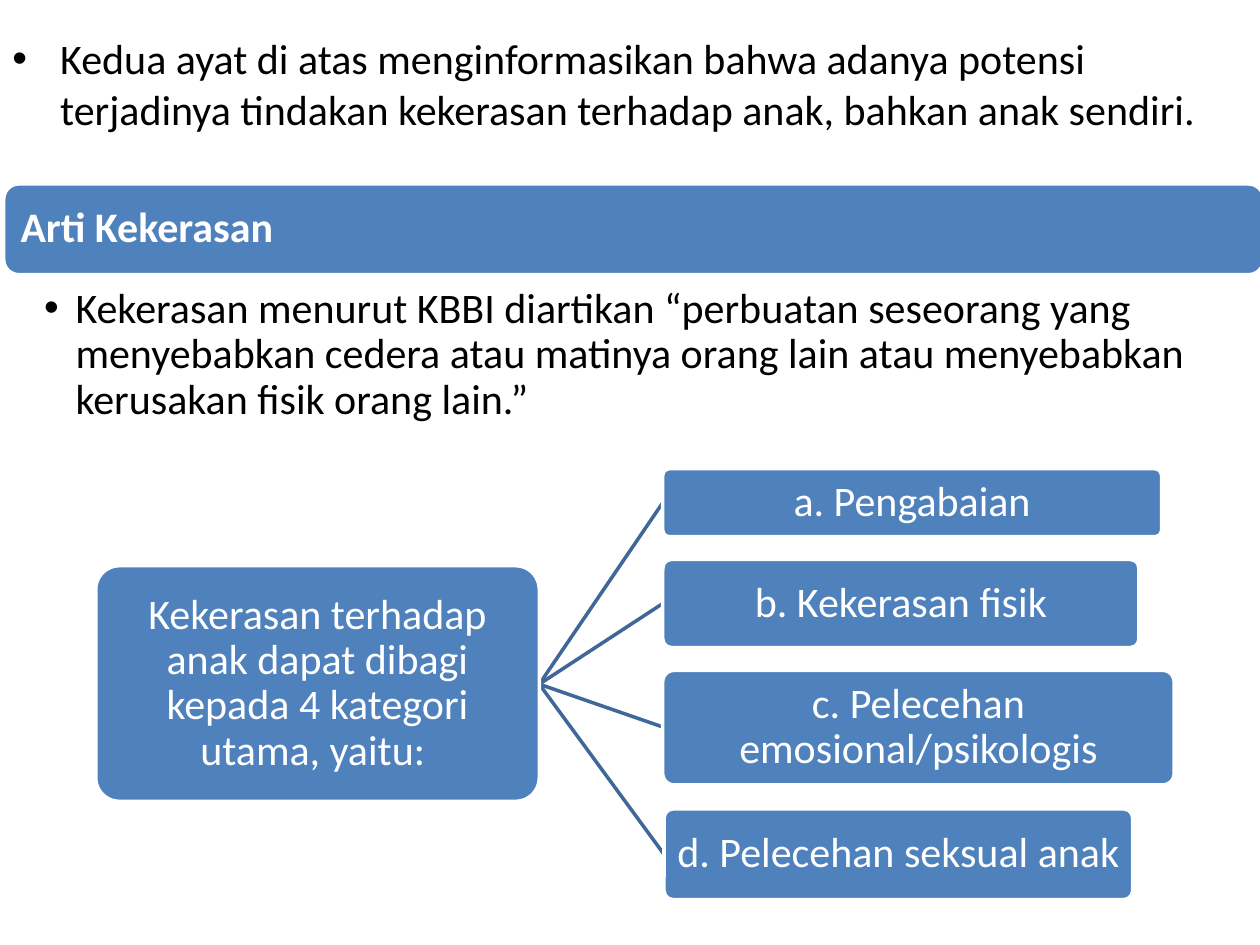
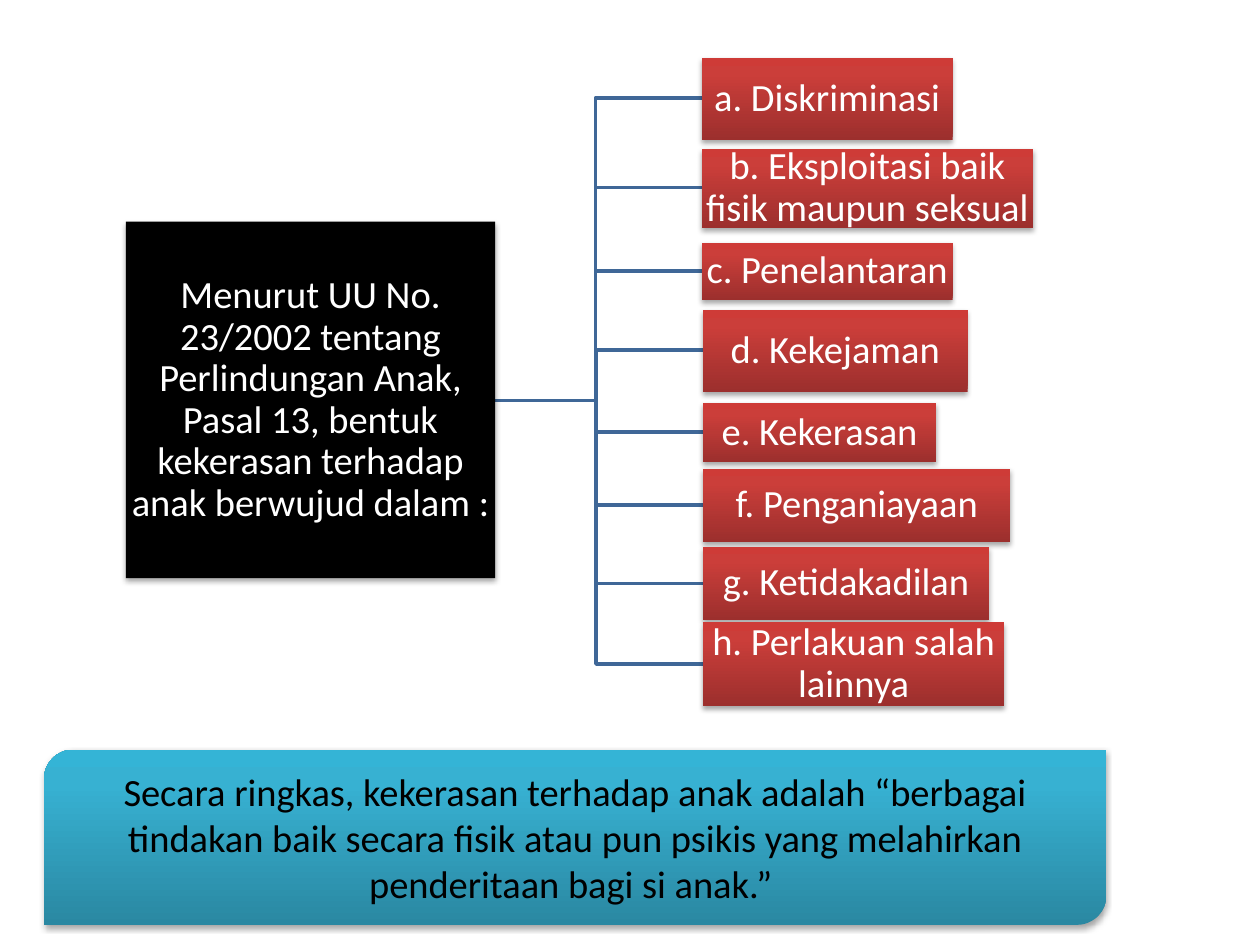
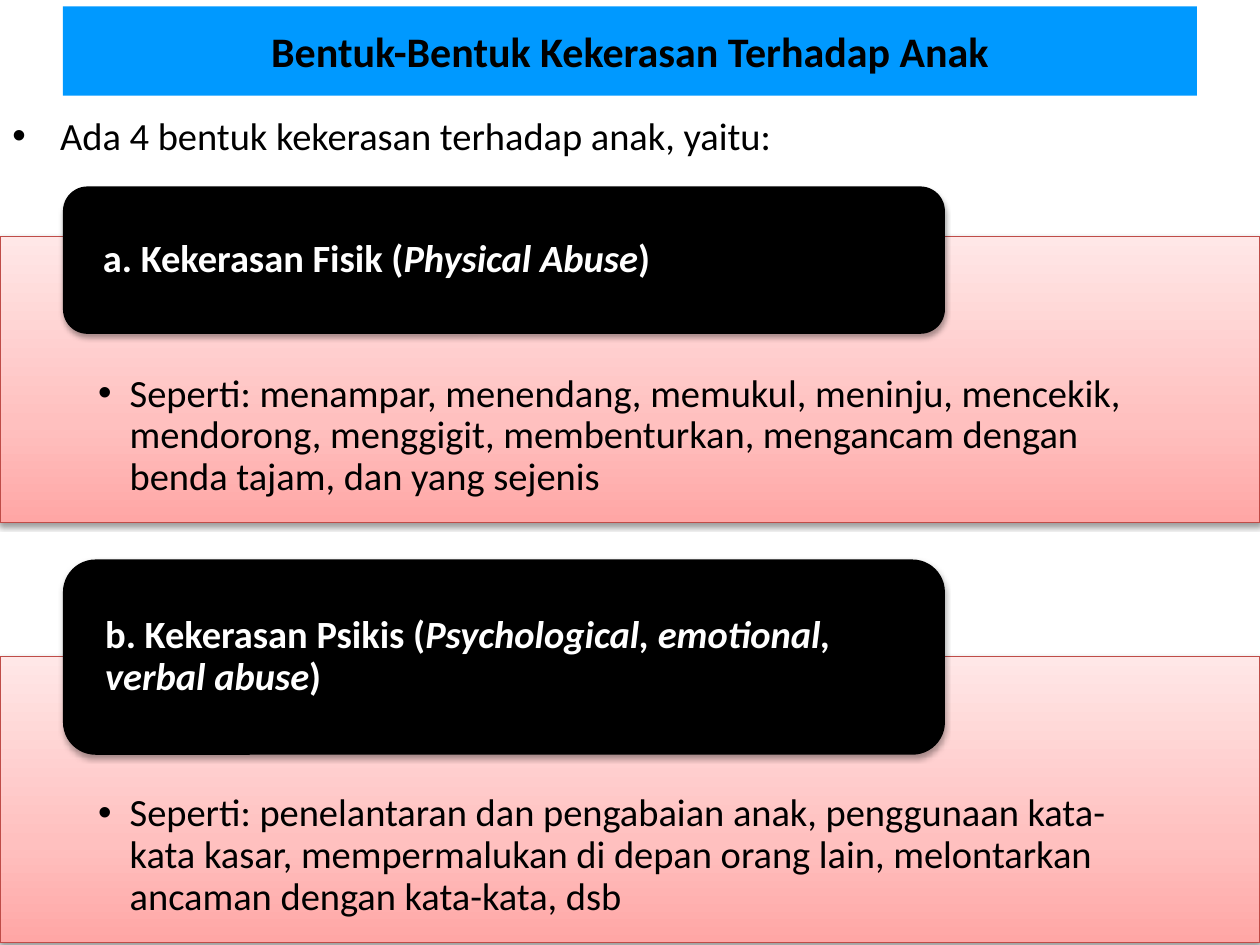
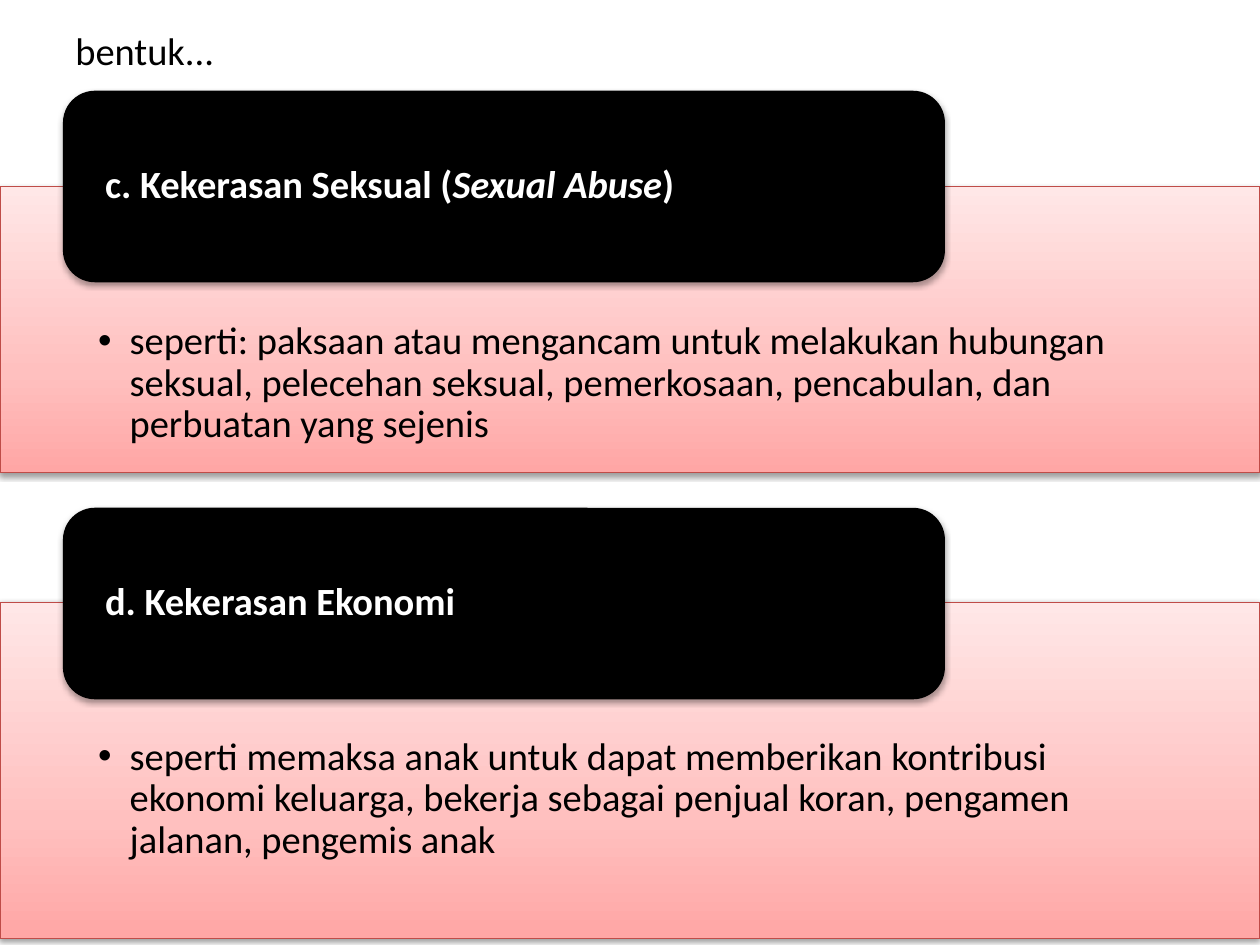
from lxml.etree import SubElement
from pptx import Presentation
from pptx.dml.color import RGBColor
from pptx.enum.shapes import MSO_CONNECTOR as CONN, MSO_SHAPE as SHAPE
from pptx.enum.text import MSO_ANCHOR as ANCHOR, PP_ALIGN as ALIGN
from pptx.oxml.ns import qn
from pptx.util import Pt

PX = 9144  # 100 px to the inch
FONT = "Calibri"
BLACK = RGBColor(0x00, 0x00, 0x00)
WHITE = RGBColor(0xFF, 0xFF, 0xFF)
BLUE = RGBColor(0x4F, 0x81, 0xBD)
LINK = RGBColor(0x3F, 0x67, 0x97)
TITLE_BLUE = RGBColor(0x00, 0x99, 0xFF)
PANEL_LINE = RGBColor(0xBF, 0x4C, 0x48)

# Gradients run from the bottom up: (percent, colour)
RED_GRAD = [(0, RGBColor(0x9C, 0x2F, 0x2D)), (80, RGBColor(0xCB, 0x3E, 0x3A)),
            (100, RGBColor(0xCE, 0x3B, 0x37))]
AQUA_GRAD = [(0, RGBColor(0x2A, 0x88, 0xA2)), (80, RGBColor(0x37, 0xB1, 0xD2)),
             (100, RGBColor(0x34, 0xB4, 0xD6))]
PINK_GRAD = [(0, RGBColor(0xFF, 0xA6, 0xA5)), (35, RGBColor(0xFF, 0xC0, 0xBF)),
             (100, RGBColor(0xFF, 0xE7, 0xE7))]

# Shadows: opacity in percent, distance in points
SHADOW = (35, 1.8)
PANEL_SHADOW = (38, 1.6)


def add_box(s, kind, at, fill, line=None, line_pt=2, shadow=None, adj=None):
    sp = s.shapes.add_shape(kind, *(v * PX for v in at))
    sp.shadow.inherit = False
    if adj is not None:
        sp.adjustments[0] = adj
    if isinstance(fill, list):
        sp.fill.gradient()
        sp.fill.gradient_angle = 90
        stops = sp._element.spPr.find(qn("a:gradFill")).find(qn("a:gsLst"))
        stops[:] = []
        for pos, color in fill:
            gs = SubElement(stops, qn("a:gs"), pos=str(pos * 1000))
            SubElement(gs, qn("a:srgbClr"), val=str(color))
    else:
        sp.fill.solid()
        sp.fill.fore_color.rgb = fill
    if line is None:
        sp.line.fill.background()
    else:
        sp.line.color.rgb = line
        sp.line.width = Pt(line_pt)
    if shadow:
        alpha, dist = shadow
        effects = sp._element.spPr.find(qn("a:effectLst"))
        outer = SubElement(effects, qn("a:outerShdw"), blurRad=str(Pt(3.1)), dist=str(Pt(dist)),
                           dir="5400000", rotWithShape="0")
        color = SubElement(outer, qn("a:srgbClr"), val=str(BLACK))
        SubElement(color, qn("a:alpha"), val=str(alpha * 1000))
    return sp


def write(sp, runs, size, color, ins=(10, 5, 10, 5), anchor=ANCHOR.MIDDLE,
          align=ALIGN.LEFT, spacing=0.9, bold=False, bullet=0):
    """Write (text, italic) runs; bullet is the hanging indent in px."""
    tf = sp.text_frame
    tf.word_wrap = True
    tf.vertical_anchor = anchor
    tf.margin_left, tf.margin_top, tf.margin_right, tf.margin_bottom = (v * PX for v in ins)
    p = tf.paragraphs[0]
    p.alignment = align
    p.line_spacing = spacing
    if bullet:
        pPr = p._p.get_or_add_pPr()
        pPr.set("marL", str(bullet * PX))
        pPr.set("indent", str(-bullet * PX))
        SubElement(pPr, qn("a:buFont"), typeface="Arial")
        SubElement(pPr, qn("a:buChar"), char="•")
    for text, italic in runs:
        r = p.add_run()
        r.text = text
        r.font.name = FONT
        r.font.size = Pt(size)
        r.font.color.rgb = color
        r.font.bold = bold
        r.font.italic = italic


prs = Presentation()
prs.slide_width, prs.slide_height = 1000 * PX, 750 * PX
slides = [prs.slides.add_slide(prs.slide_layouts[6]) for _ in range(4)]

# Plain text: slide, place, text, size, anchor, line spacing, insets, bullet
PLAIN = (10, 5, 10, 5)
for n, at, text, size, anchor, spacing, ins, bullet in [
    (0, (0, 21, 1000, 110), "Kedua ayat di atas menginformasikan bahwa adanya potensi terjadinya "
     "tindakan kekerasan terhadap anak, bahkan anak sendiri.", 24, ANCHOR.TOP, 1.0, PLAIN, 38),
    (0, (3, 225, 1000, 118), "Kekerasan menurut KBBI diartikan “perbuatan seseorang yang menyebabkan "
     "cedera atau matinya orang lain atau menyebabkan kerusakan fisik orang lain.”",
     24, ANCHOR.TOP, 0.9, (32, 3, 19, 3), 25),
    (2, (0, 84, 1000, 55), "Ada 4 bentuk kekerasan terhadap anak, yaitu:",
     22, ANCHOR.TOP, 1.0, PLAIN, 38),
    (3, (50, -3, 900, 85), "bentuk...", 22, ANCHOR.MIDDLE, 1.0, PLAIN, 0),
]:
    tb = slides[n].shapes.add_textbox(*(v * PX for v in at))
    write(tb, [(text, False)], size, BLACK, ins, anchor, spacing=spacing, bullet=bullet)

# Slide 1: heading band
band = add_box(slides[0], SHAPE.ROUNDED_RECTANGLE, (3, 146, 1000, 72), BLUE, WHITE)
write(band, [("Arti Kekerasan", False)], 24, WHITE, (10, 10, 10, 10), bold=True)

# Slides 1 and 2: a root box joined to its branches
TIGHT = (2, 2, 2, 2)
trees = [
    dict(s=slides[0], kind=SHAPE.ROUNDED_RECTANGLE, adj=0.1, size=24, line=WHITE, shadow=None,
         conn=CONN.STRAIGHT, start=(428, 543), root_fill=BLUE, fill=BLUE,
         root=((76, 449, 352, 187),
               "Kekerasan terhadap anak dapat dibagi kepada 4 kategori utama, yaitu: "),
         branches=[((526, 372, 396, 54), "a. Pengabaian"),
                   ((526, 444, 378, 70), "b. Kekerasan fisik"),
                   ((526, 532, 406, 91), "c. Pelecehan emosional/psikologis"),
                   ((527, 642, 372, 72), "d. Pelecehan seksual anak")]),
    dict(s=slides[1], kind=SHAPE.RECTANGLE, adj=None, size=22, line=None, shadow=SHADOW,
         conn=CONN.ELBOW, start=(388, 318), root_fill=BLACK, fill=RED_GRAD,
         root=((100, 176, 293, 283), "Menurut UU No. 23/2002 tentang Perlindungan Anak, Pasal 13, "
               "bentuk kekerasan terhadap anak berwujud dalam : "),
         branches=[((557, 46, 199, 65), "a. Diskriminasi"),
                   ((557, 118, 263, 63), "b. Eksploitasi baik fisik maupun seksual"),
                   ((557, 193, 199, 45), "c. Penelantaran"),
                   ((558, 246, 210, 65), "d. Kekejaman"),
                   ((558, 320, 185, 47), "e. Kekerasan"),
                   ((558, 372, 244, 58), "f. Penganiayaan"),
                   ((558, 434, 227, 58), "g. Ketidakadilan"),
                   ((558, 494, 239, 66), "h. Perlakuan salah lainnya")]),
]
for t in trees:
    for (x, y, w, h), _ in t["branches"]:
        cx = t["s"].shapes.add_connector(
            t["conn"], *(v * PX for v in (*t["start"], x, y + h // 2)))
        cx.line.color.rgb = LINK
        cx.line.width = Pt(2)
        SubElement(cx._element.spPr, qn("a:effectLst"))
    nodes = [(*t["root"], t["root_fill"])] + [(*b, t["fill"]) for b in t["branches"]]
    for at, text, fill in nodes:
        node = add_box(t["s"], t["kind"], at, fill, t["line"], shadow=t["shadow"], adj=t["adj"])
        write(node, [(text, False)], t["size"], WHITE, TIGHT, align=ALIGN.CENTER)

# Slide 2: summary
summary = add_box(slides[1], SHAPE.ROUND_2_DIAG_RECTANGLE, (35, 595, 843, 139), AQUA_GRAD,
                  shadow=SHADOW)
write(summary, [("Secara ringkas, kekerasan terhadap anak adalah “berbagai tindakan baik secara "
                 "fisik atau pun psikis yang melahirkan penderitaan bagi si anak.” ", False)],
      22, BLACK, align=ALIGN.CENTER, spacing=1.0)

# Slide 3: title bar
title = add_box(slides[2], SHAPE.RECTANGLE, (50, 5, 900, 71), TITLE_BLUE)
write(title, [("Bentuk-Bentuk Kekerasan Terhadap Anak", False)], 24, BLACK,
      align=ALIGN.CENTER, spacing=1.0, bold=True)

# Slides 3 and 4: panels with a black tab
# slide, panel top and height, text inset, tab top and height, tab runs, panel text
for n, top, height, inset, tab_top, tab_height, heading, text in [
    (2, 188, 227, 109, 148, 117,
     [("a. Kekerasan Fisik (", False), ("Physical Abuse", True), (")", False)],
     "Seperti: menampar, menendang, memukul, meninju, mencekik, mendorong, menggigit, "
     "membenturkan, mengancam dengan benda tajam, dan yang sejenis"),
    (2, 521, 227, 109, 444, 155,
     [("b. Kekerasan Psikis (", False), ("Psychological, emotional, verbal abuse", True),
      (")", False)],
     "Seperti: penelantaran dan pengabaian anak, penggunaan kata-kata kasar, mempermalukan "
     "di depan orang lain, melontarkan ancaman dengan kata-kata, dsb"),
    (3, 148, 227, 107, 72, 152,
     [("c. Kekerasan Seksual (", False), ("Sexual Abuse", True), (")", False)],
     "seperti: paksaan atau mengancam untuk melakukan hubungan seksual, pelecehan seksual, "
     "pemerkosaan, pencabulan, dan perbuatan yang sejenis"),
    (3, 478, 267, 107, 403, 152, [("d. Kekerasan Ekonomi", False)],
     "seperti memaksa anak untuk dapat memberikan kontribusi ekonomi keluarga, bekerja "
     "sebagai penjual koran, pengamen jalanan, pengemis anak"),
]:
    panel = add_box(slides[n], SHAPE.RECTANGLE, (0, top, 1000, height), PINK_GRAD,
                    PANEL_LINE, 0.75, PANEL_SHADOW)
    write(panel, [(text, False)], 22, BLACK, (78, inset, 78, 17), ANCHOR.TOP, bullet=25)
    tab = add_box(slides[n], SHAPE.ROUNDED_RECTANGLE, (50, tab_top, 700, tab_height), BLACK,
                  shadow=SHADOW)
    write(tab, heading, 22, WHITE, (26, 0, 26, 0), bold=True)

prs.save("out.pptx")
